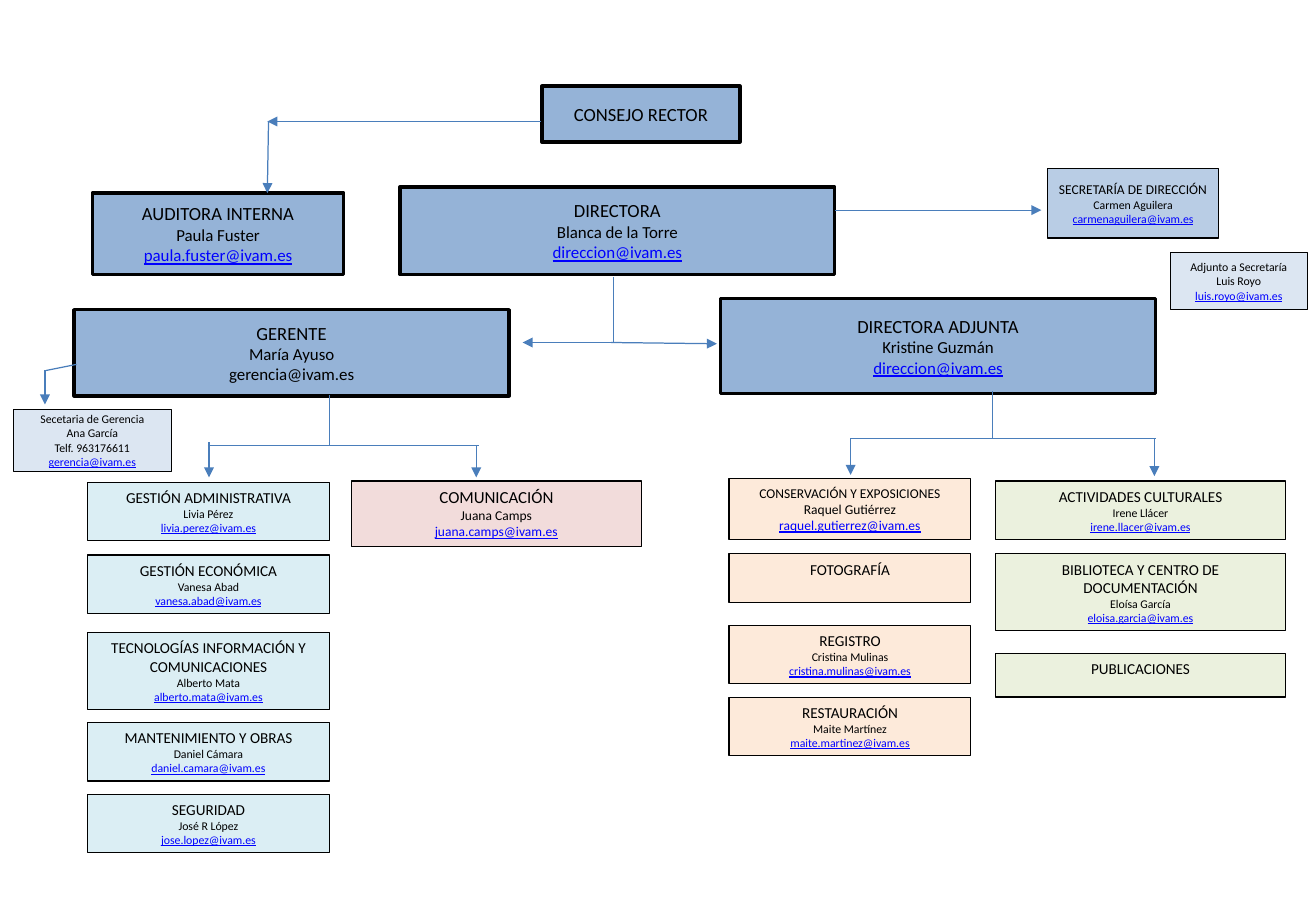
from lxml import etree
from pptx import Presentation
from pptx.dml.color import RGBColor
from pptx.enum.shapes import MSO_CONNECTOR, MSO_SHAPE
from pptx.enum.text import MSO_ANCHOR, PP_ALIGN
from pptx.oxml.ns import qn
from pptx.util import Inches, Pt

RECT = MSO_SHAPE.RECTANGLE
LINE = MSO_CONNECTOR.STRAIGHT
TOP, MID = MSO_ANCHOR.TOP, MSO_ANCHOR.MIDDLE
CENTER = PP_ALIGN.CENTER
CELL = 0.1
FONT = "Calibri"
BLACK, LINK, WIRE = "000000", "0000FF", "4A7EBB"
BLUE, SOFT, PALE = "95B3D7", "B9CDE5", "DCE6F2"
AQUA, ROSE, PEACH, GREEN = "DBEEF4", "F2DCDB", "FDEADA", "EBF1DE"
CHIEF, AIDE, UNIT = (11, 10), (7, 7), (9, 7)


def color(code):
    return RGBColor.from_string(code)


def cells(*spans):
    return [Inches(CELL * span) for span in spans]


def card(slide, spot, area, fill, lines, sizes, edge=0.75, anchor=MID, link=True):
    x, y, w, h = area
    shape = slide.shapes.add_shape(RECT, *cells(spot[0] + x, spot[1] + y, w, h))
    shape.shadow.inherit = False
    shape.fill.solid()
    shape.fill.fore_color.rgb = color(fill)
    shape.line.color.rgb = color(BLACK)
    shape.line.width = Pt(edge)
    frame = shape.text_frame
    frame.word_wrap = True
    frame.vertical_anchor = anchor
    frame.margin_left = frame.margin_right = Inches(0.09)
    frame.margin_top = frame.margin_bottom = Inches(0.05)
    for i, text in enumerate(lines):
        para = frame.paragraphs[0] if i == 0 else frame.add_paragraph()
        para.alignment = CENTER
        run = para.add_run()
        run.text = text
        run.font.name = FONT
        run.font.size = Pt(sizes[min(i, 1)])
        mail = link and "@" in text
        run.font.underline = mail
        run.font.color.rgb = color(LINK if mail else BLACK)


def chief(slide, spot, area, lines, link=True):
    card(slide, spot, area, BLUE, lines, CHIEF, edge=2, link=link)


def stack(slide, spot, left, width, fill, units):
    for top, height, lines, sizes in units:
        card(slide, spot, (left, top, width, height), fill, lines, sizes, anchor=TOP)


def wires(slide, spot, routes):
    x, y = spot
    for x1, y1, x2, y2, arrow in routes:
        wire = slide.shapes.add_connector(
            LINE, *cells(x + x1, y + y1, x + x2, y + y2))
        wire.line.color.rgb = color(WIRE)
        wire.line.width = Pt(0.75)
        if arrow:
            etree.SubElement(wire.line._get_or_add_ln(), qn("a:tailEnd"), type="triangle")
        etree.SubElement(wire._element.spPr, qn("a:effectLst"))


def board(slide, spot):
    chief(slide, spot, (37, 0, 16.3, 4.6), ["CONSEJO RECTOR"])
    chief(slide, spot, (0, 8.8, 20.7, 6.7),
          ["AUDITORA INTERNA", "Paula Fuster", "paula.fuster@ivam.es"])
    chief(slide, spot, (25.3, 8.3, 35.8, 7.2),
          ["DIRECTORA", "Blanca de la Torre", "direccion@ivam.es"])
    card(slide, spot, (78.6, 6.8, 14.1, 5.7), SOFT,
         ["SECRETARÍA DE DIRECCIÓN", "Carmen Aguilera", "carmenaguilera@ivam.es"], (8, 7))
    card(slide, spot, (88.7, 13.7, 11.3, 4.7), PALE,
         ["Adjunto a Secretaría", "Luis Royo", "luis.royo@ivam.es"], AIDE)
    wires(slide, spot, [
        (36.9, 2.9, 14.4, 2.9, True),
        (14.5, 2.9, 14.4, 8.8, True),
        (61.1, 10.2, 78.1, 10.2, True),
        (42.9, 15.7, 42.9, 21.1, False),
        (42.8, 21.1, 35.4, 21.1, True),
        (42.7, 21.1, 51.4, 21.2, True),
    ])


def manager(slide, spot):
    chief(slide, spot, (5, 0, 35.8, 7.1),
          ["GERENTE", "María Ayuso", "gerencia@ivam.es"], link=False)
    card(slide, spot, (0, 8.2, 13, 5.1), PALE,
         ["Secetaria de Gerencia", "Ana García", "Telf. 963176611", "gerencia@ivam.es"], AIDE)
    stack(slide, spot, 6.1, 19.9, AQUA, [
        (14.2, 4.8, ["GESTIÓN ADMINISTRATIVA", "Livia Pérez", "livia.perez@ivam.es"], UNIT),
        (20.2, 4.8, ["GESTIÓN ECONÓMICA", "Vanesa Abad", "vanesa.abad@ivam.es"], UNIT),
        (26.6, 6.3, ["TECNOLOGÍAS INFORMACIÓN Y COMUNICACIONES", "Alberto Mata",
                     "alberto.mata@ivam.es"], UNIT),
        (34, 4.8, ["MANTENIMIENTO Y OBRAS", "Daniel Cámara", "daniel.camara@ivam.es"], UNIT),
        (39.9, 4.8, ["SEGURIDAD", "José R López", "jose.lopez@ivam.es"], UNIT),
    ])
    stack(slide, spot, 27.8, 23.9, ROSE, [
        (14.1, 5.4, ["COMUNICACIÓN", "Juana Camps", "juana.camps@ivam.es"], (10, 8)),
    ])
    wires(slide, spot, [
        (2.6, 5, 2.6, 7.8, True),
        (2.7, 5, 5.2, 4.5, False),
        (26, 7, 26, 11.2, False),
        (16, 11.2, 38.3, 11.2, False),
        (16.1, 10.9, 16.1, 13.8, True),
        (38.1, 11.2, 38.1, 13.8, True),
    ])


def deputy(slide, spot):
    chief(slide, spot, (0, 0, 35.8, 7.8),
          ["DIRECTORA ADJUNTA", "Kristine Guzmán", "direccion@ivam.es"])
    stack(slide, spot, 0.7, 19.9, PEACH, [
        (14.8, 5, ["CONSERVACIÓN Y EXPOSICIONES", "Raquel Gutiérrez",
                   "raquel.gutierrez@ivam.es"], (8, 8)),
        (21, 4, ["FOTOGRAFÍA"], UNIT),
        (26.9, 4.8, ["REGISTRO", "Cristina Mulinas", "cristina.mulinas@ivam.es"], UNIT),
        (32.8, 4.8, ["RESTAURACIÓN", "Maite Martínez", "maite.martinez@ivam.es"], UNIT),
    ])
    stack(slide, spot, 22.6, 23.9, GREEN, [
        (15, 4.8, ["ACTIVIDADES CULTURALES", "Irene Llácer", "irene.llacer@ivam.es"], UNIT),
        (21, 6.3, ["BIBLIOTECA Y CENTRO DE DOCUMENTACIÓN", "Eloísa García",
                   "eloisa.garcia@ivam.es"], UNIT),
        (29.2, 3.6, ["PUBLICACIONES"], UNIT),
    ])
    wires(slide, spot, [
        (22.4, 7.6, 22.4, 11.5, False),
        (10.7, 11.5, 35.8, 11.5, False),
        (10.7, 11.5, 10.7, 14.5, True),
        (35.7, 11.5, 35.7, 14.6, True),
    ])


def main():
    deck = Presentation()
    deck.slide_width, deck.slide_height = Inches(10.83), Inches(7.5)
    slide = deck.slides.add_slide(deck.slide_layouts[6])
    board(slide, (7.6, 7.1))
    manager(slide, (1.1, 25.5))
    deputy(slide, (59.3, 24.6))
    deck.save("out.pptx")


if __name__ == "__main__":
    main()
